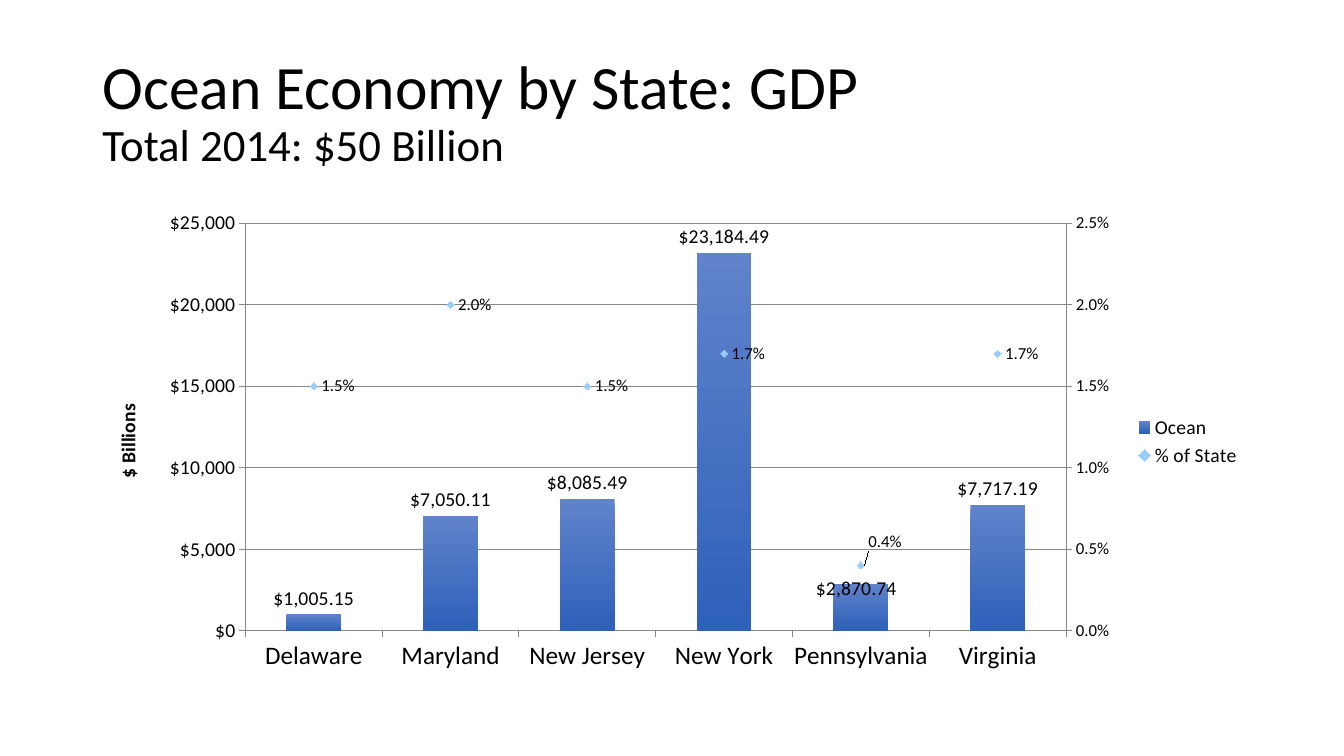
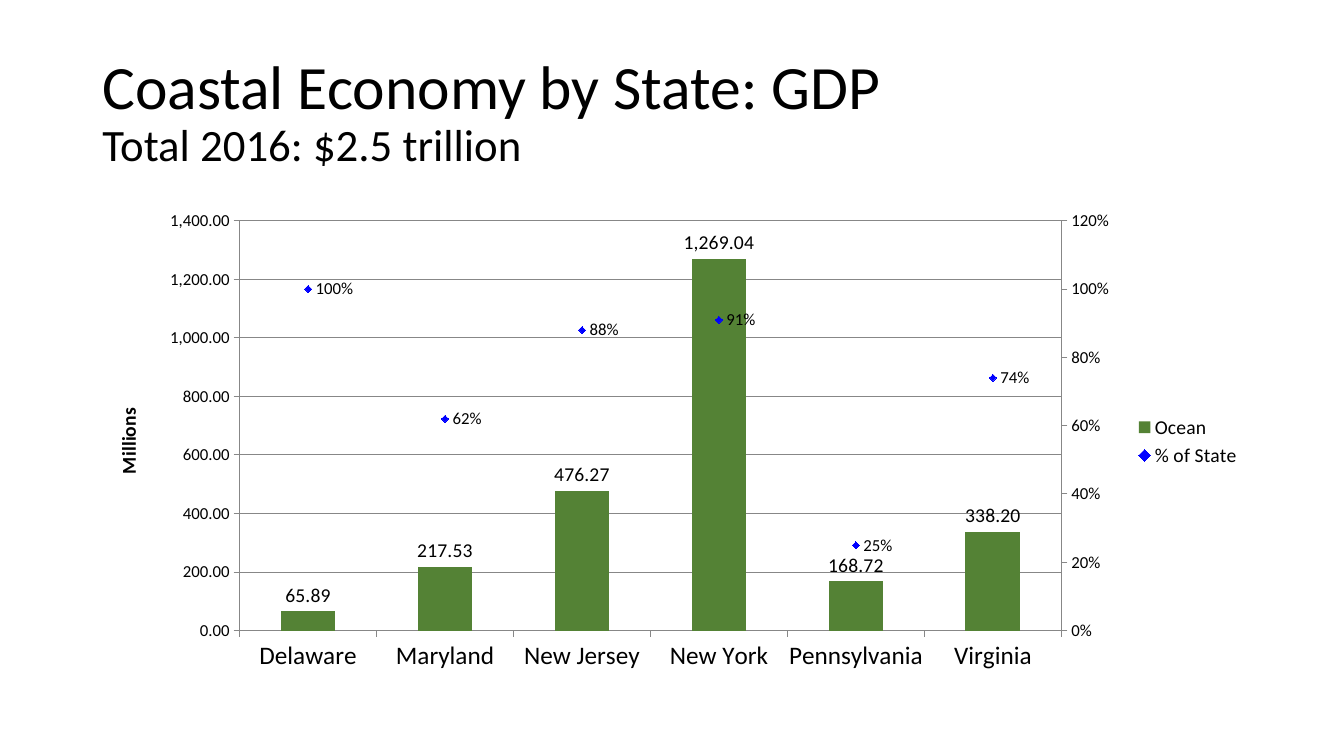
from dataclasses import dataclass

from pptx import Presentation
from pptx.chart.axis import ValueAxis
from pptx.chart.data import CategoryChartData
from pptx.dml.color import RGBColor
from pptx.enum.chart import XL_CHART_TYPE as ChartType
from pptx.enum.chart import XL_LABEL_POSITION as LabelPosition
from pptx.enum.chart import XL_LEGEND_POSITION as LegendPosition
from pptx.enum.chart import XL_MARKER_STYLE as MarkerStyle
from pptx.enum.chart import XL_TICK_MARK as TickMark
from pptx.enum.text import MSO_ANCHOR as Anchor
from pptx.oxml import parse_xml
from pptx.oxml.ns import nsdecls, qn
from pptx.util import Pt


@dataclass(frozen=True)
class Theme:
    font: str = "Calibri"
    ink: str = "000000"
    grid: str = "878787"
    title: int = 44
    subtitle: int = 32
    category: int = 18
    label: int = 14
    small: int = 12


THEME = Theme()
PAGE_SIZE = (960, 540)
TITLE_BOX = (66, 28.75, 828, 104.4)
CHART_BOX = (66, 144, 828, 342.5)
STATES = ("Delaware", "Maryland", "New Jersey", "New York", "Pennsylvania", "Virginia")
NO_LEADER_LINES = (
    '<c:ext uri="{CE6537A1-D6FC-4f65-9D91-7224C49458BB}"'
    ' xmlns:c15="http://schemas.microsoft.com/office/drawing/2012/chart">'
    '<c15:showLeaderLines val="0"/></c:ext>'
)

SLIDES = [
    dict(
        title="Ocean Economy by State: GDP",
        subtitle="Total 2014: $50 Billion",
        axis_title="$ Billions",
        gdp=(1005.15, 7050.11, 8085.49, 23184.49, 2870.74, 7717.19),
        share=(0.015, 0.02, 0.015, 0.017, 0.004, 0.017),
        left=dict(top=25000, step=5000, code='"$"#,##0', size=THEME.label),
        right=dict(top=0.025, step=0.005, code="0.0%", size=THEME.small),
        gdp_code='"$"#,##0.00',
        bar=("6083CB", "2E61BA"),
        marker="99CCFF",
        plot=(0.132, 0.045, 0.708, 0.85),
        # series index, state index, label shift as a share of the chart
        moved_labels=[(0, 4, -0.004, 0.044), (1, 4, 0, -0.05)],
    ),
    dict(
        title="Coastal Economy by State: GDP",
        subtitle="Total 2016: $2.5 trillion",
        axis_title="Millions",
        gdp=(65.89, 217.53, 476.27, 1269.04, 168.72, 338.2),
        share=(1, 0.62, 0.88, 0.91, 0.25, 0.74),
        left=dict(top=1400, step=200, code="#,##0.00", size=THEME.small),
        right=dict(top=1.2, step=0.2, code="0%", size=THEME.small),
        gdp_code="#,##0.00",
        bar=("548235",),
        marker="0000FF",
        plot=(0.127, 0.04, 0.709, 0.855),
        moved_labels=[],
    ),
]


def apply(target, **values):
    for name, value in values.items():
        setattr(target, name, value)


def style_font(font, size, bold=False):
    apply(font, name=THEME.font, size=Pt(size), bold=bold)
    font.color.rgb = RGBColor.from_string(THEME.ink)


def paint(fill, color):
    fill.solid()
    fill.fore_color.rgb = RGBColor.from_string(color)


def chart_xml(tag, body):
    return parse_xml(f"<c:{tag} {nsdecls('c')}>{body}</c:{tag}>")


def layout_xml(**values):
    parts = "".join(f'<c:{name} val="{value}"/>' for name, value in values.items())
    return chart_xml("layout", f"<c:manualLayout>{parts}</c:manualLayout>")


def add_title(page, box, title, subtitle):
    frame = page.shapes.add_textbox(*map(Pt, box)).text_frame
    apply(frame, word_wrap=True, vertical_anchor=Anchor.MIDDLE)
    para = frame.paragraphs[0]
    para.line_spacing = 0.9
    for index, (text, size) in enumerate(((title, THEME.title), (subtitle, THEME.subtitle))):
        if index:
            para.add_line_break()
        span = para.add_run()
        span.text = text
        style_font(span.font, size)


def move_share_to_right_axis(chart):
    """Turn the second series into markers on a second pair of axes."""
    area = chart.plots[0]._element.getparent()
    bars = area.find(qn("c:barChart"))
    share = bars.findall(qn("c:ser"))[1]
    for child in share.findall(qn("c:invertIfNegative")):
        share.remove(child)
    lines = chart_xml(
        "lineChart",
        '<c:grouping val="standard"/><c:varyColors val="0"/>'
        '<c:marker val="1"/><c:axId val="5001"/><c:axId val="5002"/>',
    )
    lines.insert(2, share)
    bars.addnext(lines)

    def axis_xml(tag, own, other, hidden, side, ending):
        return chart_xml(
            tag,
            f'<c:axId val="{own}"/><c:scaling><c:orientation val="minMax"/></c:scaling>'
            f'<c:delete val="{hidden}"/><c:axPos val="{side}"/>'
            f'<c:majorTickMark val="out"/><c:minorTickMark val="none"/>'
            f'<c:tickLblPos val="nextTo"/><c:crossAx val="{other}"/>{ending}',
        )

    left = area.find(qn("c:valAx"))
    right = axis_xml("valAx", 5002, 5001, 0, "r",
                     '<c:crosses val="max"/><c:crossBetween val="between"/>')
    left.addnext(right)
    right.addnext(axis_xml("catAx", 5001, 5002, 1, "b", '<c:crosses val="autoZero"/>'))
    return area, ValueAxis(left), ValueAxis(right)


def style_line(line):
    line.width = Pt(0.75)
    paint(line.fill, THEME.grid)


def style_axis(axis, size, code=None, top=None, step=None):
    apply(axis, major_tick_mark=TickMark.OUTSIDE, minor_tick_mark=TickMark.NONE)
    style_font(axis.tick_labels.font, size)
    style_line(axis.format.line)
    if code:
        apply(axis, minimum_scale=0, maximum_scale=top, major_unit=step)
        apply(axis.tick_labels, number_format=code, number_format_is_linked=False)


def style_labels(series, size, code, position):
    labels = series.data_labels
    apply(labels, show_value=True, number_format=code,
          number_format_is_linked=False, position=position)
    style_font(labels.font, size)
    series._element.find(qn("c:dLbls")).append(chart_xml("extLst", NO_LEADER_LINES))


def shift_label(series, point, size, code, position, x, y):
    label = series.points[point].data_label
    style_font(label.font, size)
    label.position = position
    element = next(item for item in series._element.iter(qn("c:dLbl"))
                   if item.find(qn("c:idx")).get("val") == str(point))
    number = chart_xml("numFmt", "")
    number.set("formatCode", code)
    number.set("sourceLinked", "0")
    element.insert(1, layout_xml(x=x, y=y))
    element.insert(2, number)


def add_state_chart(page, box, item):
    data = CategoryChartData()
    data.categories = STATES
    data.add_series("Ocean", item["gdp"])
    data.add_series("% of State", item["share"])
    chart = page.shapes.add_chart(ChartType.COLUMN_CLUSTERED, *map(Pt, box), data).chart
    chart.has_title = False
    style_font(chart.font, THEME.category)
    area, left_axis, right_axis = move_share_to_right_axis(chart)

    # Plot area
    for old in area.findall(qn("c:layout")):
        area.remove(old)
    x, y, w, h = item["plot"]
    area.insert(0, layout_xml(layoutTarget="inner", xMode="edge", yMode="edge", x=x, y=y, w=w, h=h))

    # Axes
    style_axis(chart.category_axis, THEME.category)
    style_axis(left_axis, **item["left"])
    style_axis(right_axis, **item["right"])
    left_axis.has_major_gridlines = True
    style_line(left_axis.major_gridlines.format.line)
    para = left_axis.axis_title.text_frame.paragraphs[0]
    span = para.add_run()
    span.text = item["axis_title"]
    style_font(span.font, THEME.label, bold=True)

    # Columns
    columns, markers = chart.plots
    apply(columns, gap_width=150, overlap=0, vary_by_categories=False)
    gdp, share = columns.series[0], markers.series[0]
    fill = gdp.format.fill
    if len(item["bar"]) > 1:
        fill.gradient()
        fill.gradient_angle = 270
        for stop, color in zip(fill.gradient_stops, item["bar"]):
            stop.color.rgb = RGBColor.from_string(color)
    else:
        paint(fill, item["bar"][0])

    # Markers
    share.smooth = False
    share.format.line.fill.background()
    apply(share.marker, style=MarkerStyle.DIAMOND, size=5)
    paint(share.marker.format.fill, item["marker"])
    paint(share.marker.format.line.fill, item["marker"])

    # Data labels
    labelled = [
        (gdp, THEME.label, item["gdp_code"], LabelPosition.OUTSIDE_END),
        (share, THEME.small, item["right"]["code"], LabelPosition.RIGHT),
    ]
    for series, size, code, position in labelled:
        style_labels(series, size, code, position)
    for index, point, x, y in item["moved_labels"]:
        series, size, code, position = labelled[index]
        shift_label(series, point, size, code, position, x, y)

    # Legend
    chart.has_legend = True
    apply(chart.legend, position=LegendPosition.RIGHT, include_in_layout=False)
    style_font(chart.legend.font, THEME.label)


def main():
    deck = Presentation()
    deck.slide_width, deck.slide_height = map(Pt, PAGE_SIZE)
    for item in SLIDES:
        page = deck.slides.add_slide(deck.slide_layouts[6])
        add_title(page, TITLE_BOX, item["title"], item["subtitle"])
        add_state_chart(page, CHART_BOX, item)
    deck.save("out.pptx")


if __name__ == "__main__":
    main()
